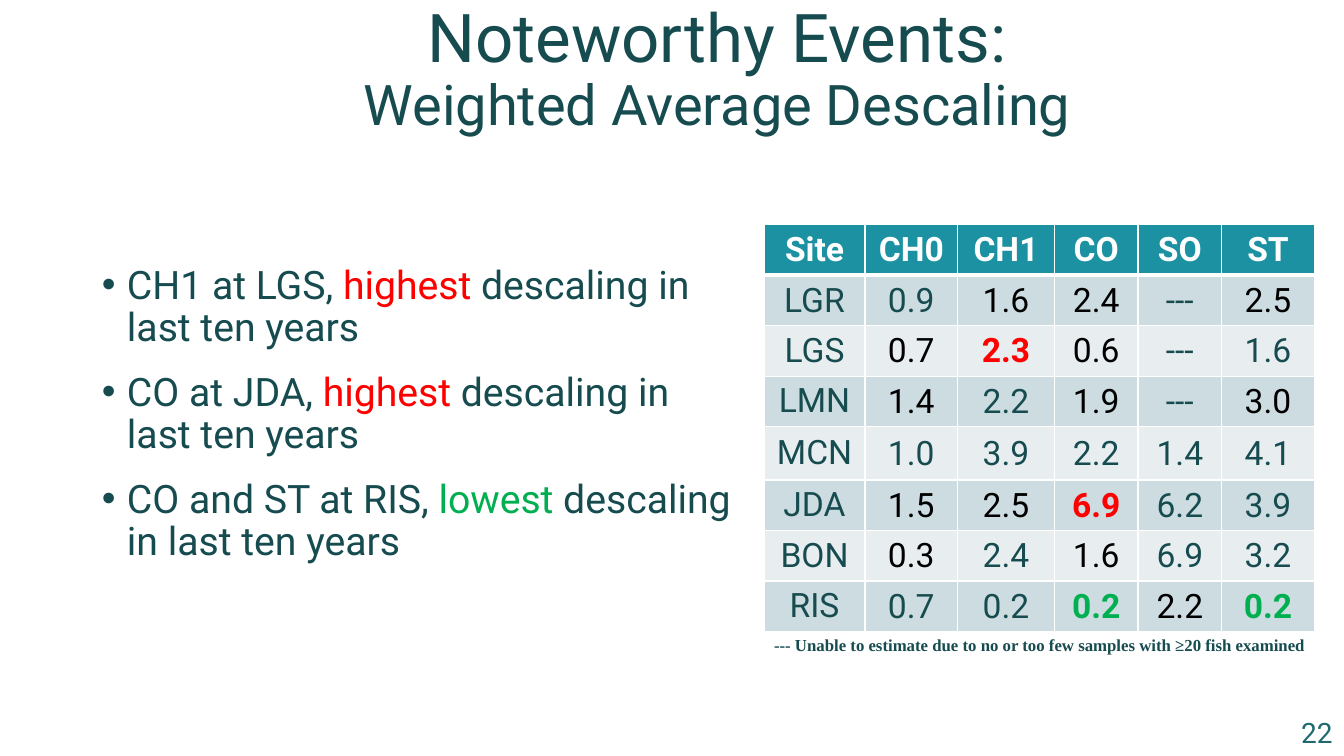
"""Build the slide on weighted average descaling."""
from lxml import etree
from pptx import Presentation
from pptx import util as u
from pptx.dml.color import RGBColor
from pptx.enum import text
from pptx.oxml.ns import qn

HUES = {
    "text": "164B4F", "page": "1F696F", "white": "FFFFFF", "black": "000000",
    "red": "FF0000", "green": "00B050",
    "head": "1B91A1", "dark": "CDDCE0", "light": "E8EEF0",
}
MARKS = {"k": "black", "r": "red", "g": "green"}
HEADS = "Site CH0 CH1 CO SO ST"
SITES = [
    "LGR 0.9 1.6k 2.4k --- 2.5k",
    "LGS 0.7k 2.3r 0.6k --- 1.6",
    "LMN 1.4k 2.2 1.9k --- 3.0k",
    "MCN 1.0 3.9 2.2 1.4 4.1",
    "JDA 1.5k 2.5k 6.9r 6.2 3.9",
    "BON 0.3k 2.4 1.6k 6.9 3.2",
    "RIS 0.7 0.2 0.2g 2.2k 0.2g",
]
COLS = [72, 66.24, 69.12, 59.76, 59.76, 66.24]
ROWS = [32.6, 36, 36, 36, 38.2, 36, 36, 36]
POINTS = [
    ("CH1 at LGS, ", "highest", "red"),
    ("CO at JDA, ", "highest", "red"),
    ("CO and ST at RIS, ", "lowest", "green"),
]
ALIGN = text.PP_ALIGN


def rgb(hue):
    return RGBColor.from_string(HUES[hue])


def write(para, words, size=24, hue="text", bold=False, font="Roboto", align=None):
    run = para.add_run()
    run.text = words
    run.font.name, run.font.size, run.font.bold = font, u.Pt(size), bold
    run.font.color.rgb = rgb(hue)
    if align is not None:
        para.alignment = align


def place(shape, left, top, width, height):
    shape.left, shape.top = u.Pt(left), u.Pt(top)
    shape.width, shape.height = u.Pt(width), u.Pt(height)


def hang(para, size):
    props = para._p.get_or_add_pPr()
    props.set("marL", str(u.Pt(size)))
    props.set("indent", str(-u.Pt(size)))
    return props


def add_title(slide):
    title = slide.shapes.title
    place(title, 65.5, 0, 893.5, 102.2)
    frame = title.text_frame
    frame.auto_size = text.MSO_AUTO_SIZE.NONE
    frame.vertical_anchor = text.MSO_ANCHOR.BOTTOM
    para = frame.paragraphs[0]
    para.line_spacing = 0.9
    write(para, "Noteworthy Events:", 48, align=ALIGN.CENTER)
    para.add_line_break()
    write(para, "Weighted Average Descaling", 40)


def add_list(slide):
    body = slide.placeholders[1]
    place(body, 65.5, 185.8, 468, 156.2)
    frame = body.text_frame
    frame.auto_size = text.MSO_AUTO_SIZE.NONE
    for i, (lead, key, hue) in enumerate(POINTS):
        para = frame.add_paragraph() if i else frame.paragraphs[0]
        props = hang(para, 18)
        etree.SubElement(props, qn("a:buFont")).set("typeface", "Arial")
        etree.SubElement(props, qn("a:buChar")).set("char", "•")
        para.line_spacing = 0.9
        para.space_before = u.Pt(16 if i else 0)
        write(para, lead, 28)
        write(para, key, 28, hue)
        write(para, " descaling in last ten years", 28)


def edge(cell, low):
    props = cell._tc.get_or_add_tcPr()
    for i, (side, width) in enumerate([("L", 1), ("R", 1), ("T", 1), ("B", low)]):
        line = etree.Element(qn("a:ln" + side), w=str(u.Pt(width)))
        fill = etree.SubElement(line, qn("a:solidFill"))
        etree.SubElement(fill, qn("a:srgbClr")).set("val", HUES["white"])
        props.insert(i, line)


def fill_cell(cell, words, back, hue, bold, low=1):
    cell.fill.solid()
    cell.fill.fore_color.rgb = rgb(back)
    edge(cell, low)
    write(cell.text_frame.paragraphs[0], words, 24, hue, bold, align=ALIGN.CENTER)


def add_grid(slide):
    grid = slide.shapes.add_table(
        len(ROWS), len(COLS), u.Pt(545.8), u.Pt(160.6),
        u.Pt(sum(COLS)), u.Pt(sum(ROWS))).table
    for col, width in zip(grid.columns, COLS):
        col.width = u.Pt(width)
    for row, height in zip(grid.rows, ROWS):
        row.height = u.Pt(height)
    for c, head in enumerate(HEADS.split()):
        fill_cell(grid.cell(0, c), head, "head", "white", True, 3)
    for r, site in enumerate(SITES, 1):
        back = "dark" if r % 2 else "light"
        for c, item in enumerate(site.split()):
            cell = grid.cell(r, c)
            hue = MARKS.get(item[-1], "text")
            fill_cell(cell, item.rstrip("krg"), back, hue, hue in ("red", "green"))
            cell.vertical_anchor = text.MSO_ANCHOR.MIDDLE
            if c:
                cell.margin_left = cell.margin_right = cell.margin_top = u.Pt(0.7)
                cell.margin_bottom = 0


def add_text(slide, area, words, **form):
    box = slide.shapes.add_textbox(*map(u.Pt, area))
    frame = box.text_frame
    frame.word_wrap = True
    write(frame.paragraphs[0], words, **form)
    return frame


def main():
    deck = Presentation()
    deck.slide_width, deck.slide_height = u.Pt(960), u.Pt(540)
    slide = deck.slides.add_slide(deck.slide_layouts[1])
    add_title(slide)
    add_list(slide)
    page = add_text(slide, (857.5, 509, 101.5, 28.8), "22", size=20, hue="page",
                    align=ALIGN.RIGHT)
    page.vertical_anchor = text.MSO_ANCHOR.MIDDLE
    add_grid(slide)
    note = add_text(
        slide, (545.8, 450, 401.8, 21.6),
        "--- Unable to estimate due to no or too few samples with ≥20 fish examined",
        size=12, bold=True, font="Times New Roman")
    hang(note.paragraphs[0], 18)
    deck.save("out.pptx")


if __name__ == "__main__":
    main()
